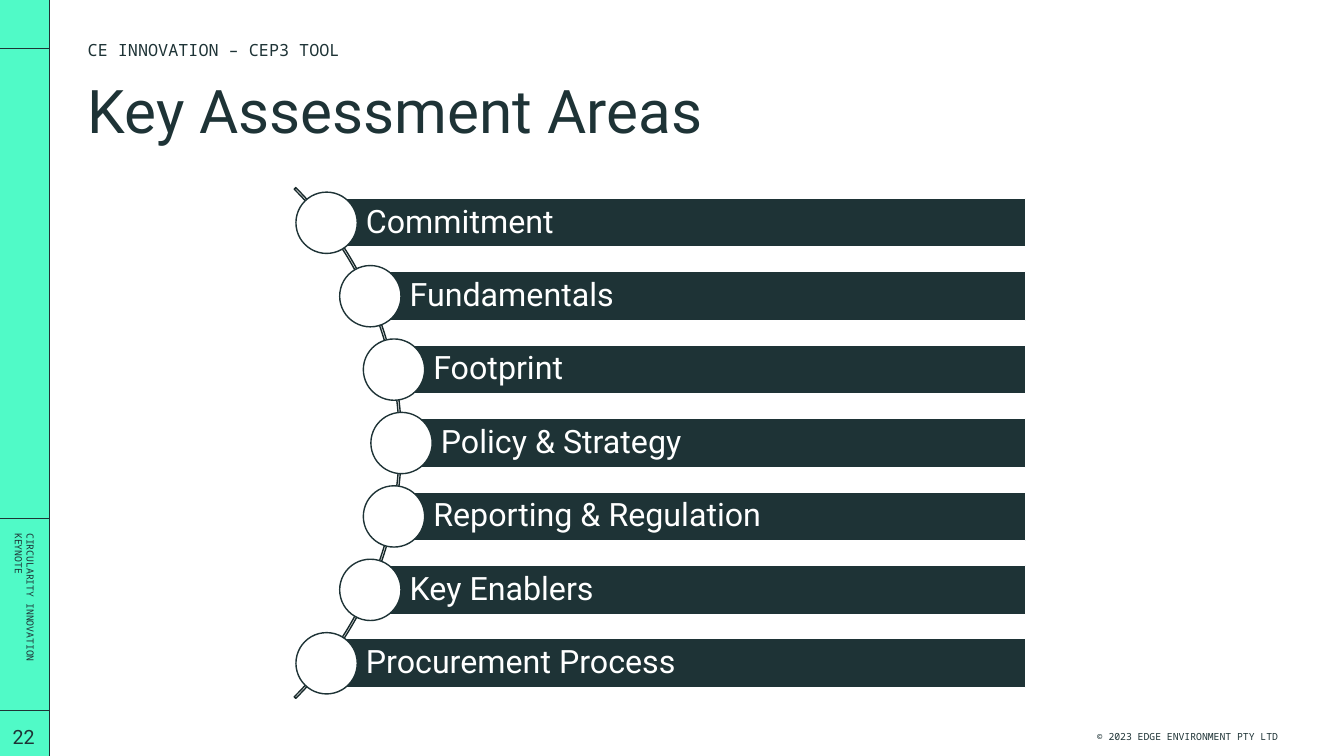
"""Build the Key Assessment Areas slide: circles and bars fanned along an arc."""
from dataclasses import dataclass
from math import sqrt
from typing import Any, Optional

from lxml import etree
from pptx import Presentation
from pptx import util as u
from pptx.dml import color as c
from pptx.enum import shapes as s
from pptx.enum import text as t
from pptx.oxml import ns

COLUMNS, ROWS = 80, 45
WIDTH, HEIGHT = u.Inches(13.333), u.Inches(7.5)


@dataclass(frozen=True)
class Theme:
    """Colours, fonts and point sizes."""
    ink: str = "1E3336"
    arc: str = "18292B"
    mint: str = "50FAC7"
    white: str = "FFFFFF"
    sans: str = "Roboto"
    mono: str = "Noto Sans Mono"
    title: float = 43
    area: float = 23
    number: float = 14
    eyebrow: float = 12
    small: float = 7
    hairline: float = 0.25
    outline: float = 1


@dataclass(frozen=True)
class Box:
    """A rectangle in grid columns and rows."""
    left: float
    top: float
    width: float
    height: float

    def lengths(self) -> tuple[int, int, int, int]:
        """Return the rectangle in slide units."""
        return across(self.left), down(self.top), across(self.width), down(self.height)


@dataclass(frozen=True)
class Rule:
    """A hairline between two grid points."""
    x1: float
    y1: float
    x2: float
    y2: float


@dataclass(frozen=True)
class Label:
    """A small free text on the slide."""
    text: str
    box: Box
    font: str
    size: float
    align: t.PP_ALIGN = t.PP_ALIGN.LEFT
    rotation: float = 0


THEME = Theme()
STRIP = 2.95
RULES = [Rule(0, row, STRIP, row) for row in (2.88, 30.85, 42.25)] + [Rule(STRIP, ROWS, STRIP, 0)]
LABELS = [
    Label("© 2023 EDGE ENVIRONMENT PTY LTD", Box(57.3, 42.66, 18.78, 2.34),
          THEME.mono, THEME.small, t.PP_ALIGN.RIGHT),
    Label("CIRCULARITY INNOVATION\nKEYNOTE", Box(-3.84, 35.88, 10.62, 2.34),
          THEME.mono, THEME.small, rotation=90),
    Label("22", Box(0.24, 42.66, 2.34, 2.34), THEME.sans, THEME.number, t.PP_ALIGN.CENTER),
]
AREAS = ["Commitment", "Fundamentals", "Footprint", "Policy & Strategy",
         "Reporting & Regulation", "Key Enablers", "Procurement Process"]
TITLE_BOX = Box(5.22, 5.22, 70.86, 7.08)
EYEBROW_BOX = Box(5.22, 2.34, 28.56, 1.86)
ARC_X, ARC_Y, ARC_RADIUS = 2.4, 26.37, 21.5
BAR_RIGHT, BAR_HEIGHT, BAR_PITCH = 61.06, 2.91, 4.37
CIRCLE = 3.65


def across(columns: float) -> int:
    """Convert grid columns to slide units."""
    return round(WIDTH * columns / COLUMNS)


def down(rows: float) -> int:
    """Convert grid rows to slide units."""
    return round(HEIGHT * rows / ROWS)


def write(frame: Any, text: str, *, font: str, size: float, color: str = THEME.ink,
          align: t.PP_ALIGN = t.PP_ALIGN.LEFT, anchor: t.MSO_ANCHOR = t.MSO_ANCHOR.MIDDLE,
          spacing: float = 1, after: float = 0,
          insets: tuple[float, float, float, float] = (0, 0, 0, 0)) -> None:
    """Fill a text frame, one paragraph per line of text."""
    frame.word_wrap = True
    frame.auto_size = t.MSO_AUTO_SIZE.NONE
    frame.vertical_anchor = anchor
    frame.margin_left, frame.margin_right = across(insets[0]), across(insets[2])
    frame.margin_top, frame.margin_bottom = down(insets[1]), down(insets[3])
    frame.text = text
    for para in frame.paragraphs:
        properties = para._p.get_or_add_pPr()
        properties.set("marL", "0")
        properties.set("indent", "0")
        etree.SubElement(properties, ns.qn("a:buNone"))
        para.alignment = align
        para.line_spacing = spacing
        para.space_before, para.space_after = u.Pt(0), u.Pt(after)
        for span in para.runs:
            span.font.name, span.font.size = font, u.Pt(size)
            span.font.color.rgb = c.RGBColor.from_string(color)


def add_shape(page: Any, kind: s.MSO_SHAPE, box: Box, fill: Optional[str],
              line: Optional[str] = None) -> Any:
    """Add a preset shape without a shadow."""
    shape = page.shapes.add_shape(kind, *box.lengths())
    shape.shadow.inherit = False
    if fill:
        shape.fill.solid()
        shape.fill.fore_color.rgb = c.RGBColor.from_string(fill)
    else:
        shape.fill.background()
    if line:
        shape.line.color.rgb = c.RGBColor.from_string(line)
        shape.line.width = u.Pt(THEME.outline)
    else:
        shape.line.fill.background()
    return shape


def add_rule(page: Any, rule: Rule) -> None:
    """Add a hairline without a shadow."""
    line = page.shapes.add_connector(s.MSO_CONNECTOR.STRAIGHT, across(rule.x1), down(rule.y1),
                                     across(rule.x2), down(rule.y2))
    line.line.color.rgb = c.RGBColor.from_string(THEME.ink)
    line.line.width = u.Pt(THEME.hairline)
    etree.SubElement(line._element.spPr, ns.qn("a:effectLst"))


def add_label(page: Any, label: Label) -> None:
    """Add a small text box."""
    box = page.shapes.add_textbox(*label.box.lengths())
    box.rotation = label.rotation
    write(box.text_frame, label.text, font=label.font, size=label.size, align=label.align)


def place(holder: Any, box: Box) -> Any:
    """Move a placeholder and return its text frame."""
    holder.left, holder.top, holder.width, holder.height = box.lengths()
    return holder.text_frame


def add_area(page: Any, text: str, step: int) -> None:
    """Add a bar and its circle, a number of steps below the middle of the arc."""
    offset = step * BAR_PITCH
    left, middle = ARC_X + sqrt(ARC_RADIUS ** 2 - offset ** 2), ARC_Y + offset
    bar = add_shape(page, s.MSO_SHAPE.RECTANGLE,
                    Box(left, middle - BAR_HEIGHT / 2, BAR_RIGHT - left, BAR_HEIGHT),
                    THEME.ink, THEME.white)
    write(bar.text_frame, text, font=THEME.sans, size=THEME.area, color=THEME.white,
          spacing=0.9, insets=(2.34, 0.36, 0.36, 0.36))
    add_shape(page, s.MSO_SHAPE.OVAL,
              Box(left - CIRCLE / 2, middle - CIRCLE / 2, CIRCLE, CIRCLE),
              THEME.white, THEME.ink)


def main() -> None:
    """Build and save the deck."""
    deck = Presentation()
    deck.slide_width, deck.slide_height = WIDTH, HEIGHT
    page = deck.slides.add_slide(deck.slide_layouts[1])
    write(place(page.shapes.title, TITLE_BOX), "Key Assessment Areas", font=THEME.sans,
          size=THEME.title, anchor=t.MSO_ANCHOR.TOP, spacing=0.8)
    write(place(page.placeholders[1], EYEBROW_BOX), "CE INNOVATION – CEP3 TOOL",
          font=THEME.mono, size=THEME.eyebrow, anchor=t.MSO_ANCHOR.TOP, after=8)
    add_shape(page, s.MSO_SHAPE.RECTANGLE, Box(0, 0, STRIP, ROWS), THEME.mint)
    for rule in RULES:
        add_rule(page, rule)
    for label in LABELS:
        add_label(page, label)
    arc = add_shape(page, s.MSO_SHAPE.BLOCK_ARC,
                    Box(ARC_X - ARC_RADIUS, ARC_Y - ARC_RADIUS, 2 * ARC_RADIUS, 2 * ARC_RADIUS),
                    None, THEME.arc)
    for index, value in enumerate((189, 27, 0.003)):
        arc.adjustments[index] = value
    for index, text in enumerate(AREAS):
        add_area(page, text, index - len(AREAS) // 2)
    deck.save("out.pptx")


if __name__ == "__main__":
    main()
